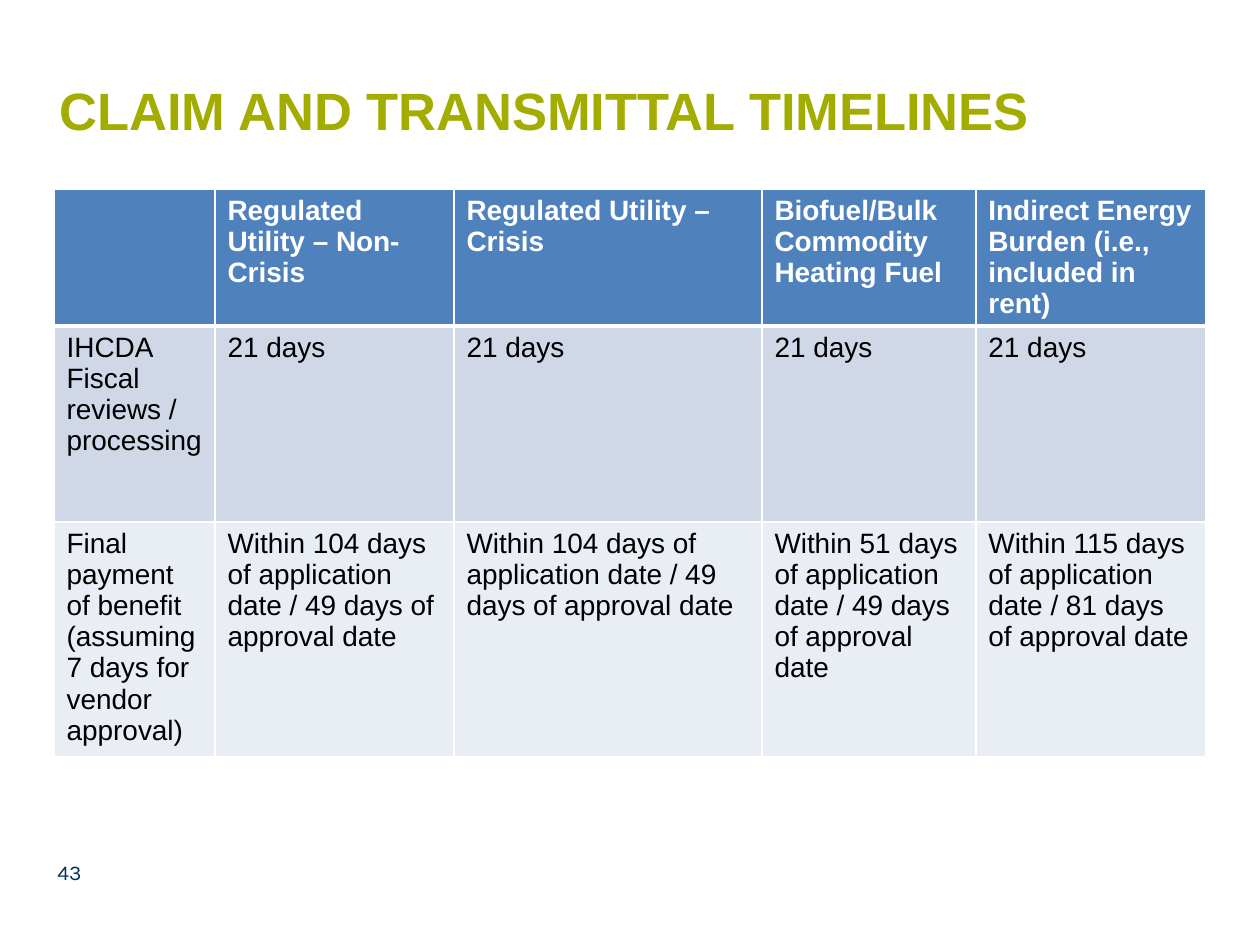
from typing import NamedTuple

from lxml.etree import SubElement
from pptx import Presentation
from pptx.dml.color import RGBColor
from pptx.enum.text import MSO_ANCHOR as Anchor, MSO_AUTO_SIZE as AutoSize, PP_ALIGN as Align
from pptx.oxml.ns import qn
from pptx.util import Emu, Pt

PX = 914400 / 126
COLORS = {
    "title": "A2AD00",
    "header": "4F81BD",
    "band": "D0D8E8",
    "light": "E9EDF4",
    "white": "FFFFFF",
    "black": "000000",
    "navy": "003359",
}
COLUMN_WIDTHS = [161, 239, 308, 214, 230]


class Row(NamedTuple):
    height: int
    fill: str
    color: str
    bold: bool
    top_line: int
    bottom_line: int
    texts: list[str]


def payment(application_days: int, approval_days: int) -> str:
    return f"Within {application_days} days of application date / {approval_days} days of approval date"


ROWS = [
    Row(135, "header", "white", True, 1, 3, [
        "",
        "Regulated Utility – Non-Crisis",
        "Regulated Utility – Crisis",
        "Biofuel/Bulk Commodity Heating Fuel",
        "Indirect Energy Burden (i.e., included in rent)",
    ]),
    Row(196, "band", "black", False, 3, 1,
        ["IHCDA Fiscal reviews / processing"] + ["21 days"] * 4),
    Row(235, "light", "black", False, 1, 1, [
        "Final payment of benefit (assuming 7 days for vendor approval)",
        payment(104, 49),
        payment(104, 49),
        payment(51, 49),
        payment(115, 81),
    ]),
]


def px(length: int) -> Emu:
    return Emu(round(length * PX))


def rgb(name: str) -> RGBColor:
    return RGBColor.from_string(COLORS[name])


def write(text_frame, text: str, *, size: int, color: str, font: str = "Arial",
          bold: bool = False, anchor=None) -> None:
    text_frame.word_wrap = True
    if anchor is not None:
        text_frame.auto_size = AutoSize.NONE
        text_frame.vertical_anchor = anchor
    paragraph = text_frame.paragraphs[0]
    paragraph.alignment = Align.LEFT
    paragraph.font.size = Pt(size)
    if not text:
        return
    run = paragraph.add_run()
    run.text = text
    run.font.name = font
    run.font.size = Pt(size)
    run.font.bold = bold
    run.font.color.rgb = rgb(color)


def add_borders(cell, top: int, bottom: int) -> None:
    """Draw white cell borders; must run before the cell is filled."""
    properties = cell._tc.get_or_add_tcPr()
    for side, width in (("L", 1), ("R", 1), ("T", top), ("B", bottom)):
        line = SubElement(properties, qn(f"a:ln{side}"), w=str(Pt(width)))
        fill = SubElement(line, qn("a:solidFill"))
        SubElement(fill, qn("a:srgbClr"), val=COLORS["white"])


def add_timeline_table(slide, left: int, top: int) -> None:
    width, height = sum(COLUMN_WIDTHS), sum(row.height for row in ROWS)
    table = slide.shapes.add_table(len(ROWS), len(COLUMN_WIDTHS), px(left), px(top),
                                   px(width), px(height)).table
    for column, column_width in zip(table.columns, COLUMN_WIDTHS):
        column.width = px(column_width)
    for row_index, row in enumerate(ROWS):
        table.rows[row_index].height = px(row.height)
        for column_index, text in enumerate(row.texts):
            cell = table.cell(row_index, column_index)
            add_borders(cell, row.top_line, row.bottom_line)
            cell.fill.solid()
            cell.fill.fore_color.rgb = rgb(row.fill)
            write(cell.text_frame, text, size=16, color=row.color, bold=row.bold)


def main() -> None:
    presentation = Presentation()
    presentation.slide_width, presentation.slide_height = px(1260), px(945)
    slide = presentation.slides.add_slide(presentation.slide_layouts[5])

    title = slide.shapes.title
    title.left, title.top, title.width, title.height = px(47), px(38), px(1153), px(144)
    write(title.text_frame, "CLAIM AND TRANSMITTAL TIMELINES", size=30, color="title",
          bold=True, anchor=Anchor.MIDDLE)

    add_timeline_table(slide, 54, 189)

    page_number = slide.shapes.add_textbox(px(45), px(847), px(294), px(50))
    write(page_number.text_frame, "43", size=12, color="navy", font="Karla",
          anchor=Anchor.MIDDLE)

    presentation.save("out.pptx")


if __name__ == "__main__":
    main()
